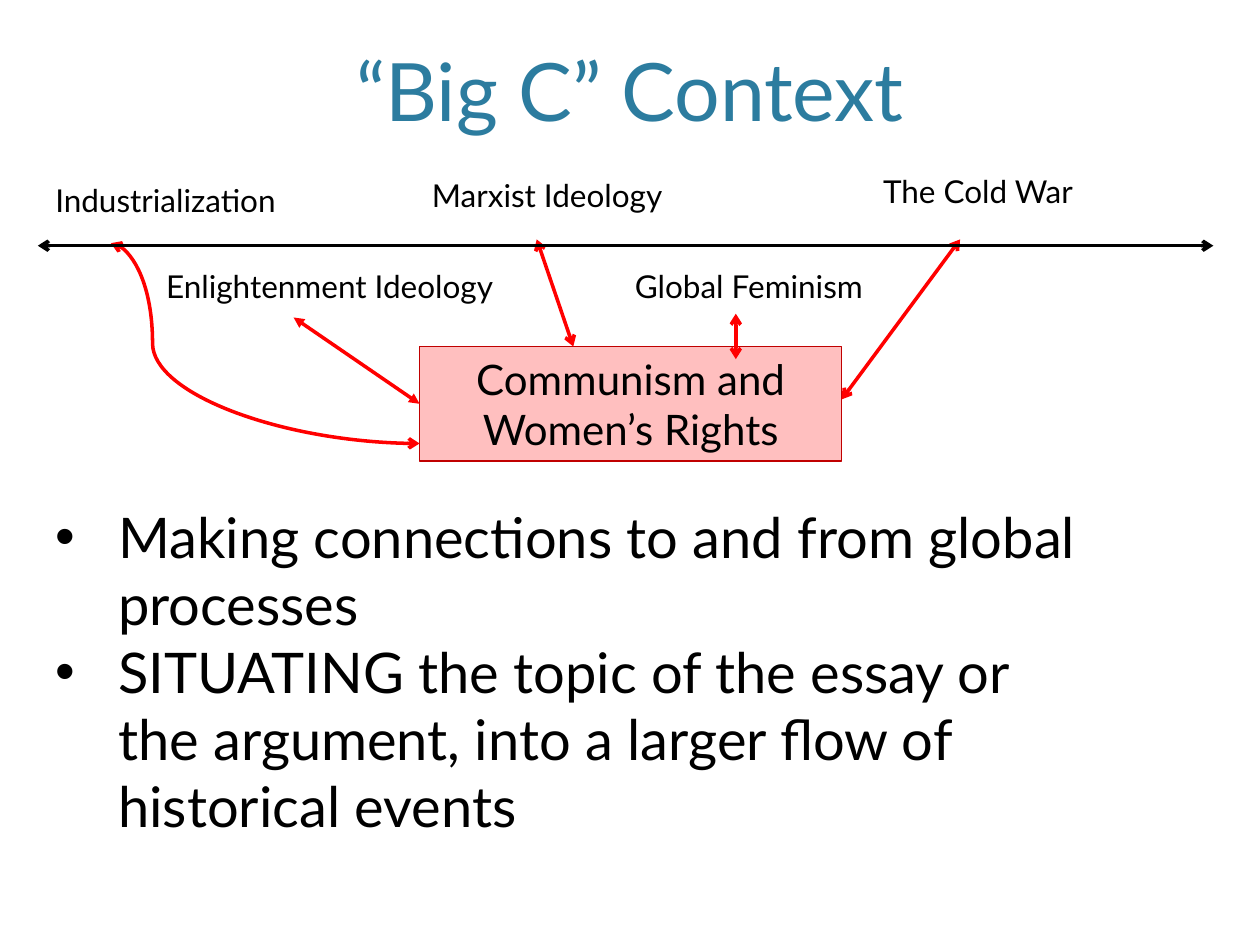
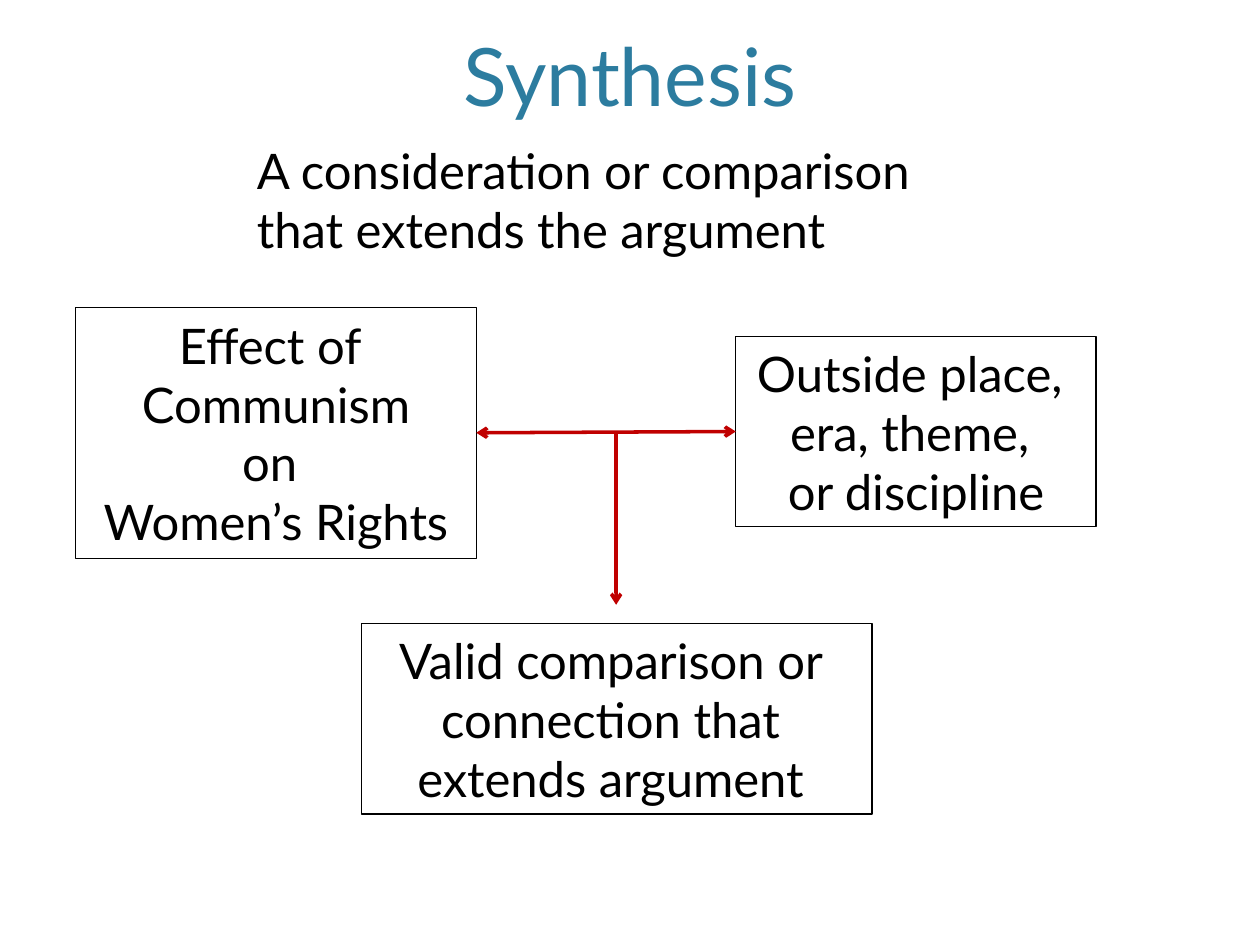
from collections import namedtuple

from lxml.etree import SubElement
from pptx import Presentation
from pptx.dml.color import RGBColor
from pptx.enum.shapes import MSO_CONNECTOR as Link, MSO_SHAPE as Preset
from pptx.enum.text import MSO_ANCHOR as Anchor, PP_ALIGN as Align
from pptx.oxml.ns import qn
from pptx.util import Emu, Pt

PX = 9144  # 100 px to the inch
FONT = "Lato"
BLACK = RGBColor(0x00, 0x00, 0x00)
TEAL = RGBColor(0x2C, 0x7C, 0x9F)
RED = RGBColor(0xFF, 0x00, 0x00)
DARK_RED = RGBColor(0xC0, 0x00, 0x00)
PINK = RGBColor(0xFF, 0xBF, 0xBF)
TOP, LEFT, BOTTOM, RIGHT = range(4)  # connection sites of a rectangle

Box = namedtuple("Box", "x y w h")


def px(*lengths):
    return [Emu(length * PX) for length in lengths]


def inside(region, x, y, w, h):
    return Box(region.x + x, region.y + y, w, h)


# Shared parts

def write(frame, paragraphs, size, color=BLACK, align=Align.LEFT, wrap=True):
    frame.word_wrap = wrap
    for i, wording in enumerate(paragraphs):
        paragraph = frame.paragraphs[0] if i == 0 else frame.add_paragraph()
        paragraph.text = wording
        paragraph.alignment = align
        paragraph.font.name = FONT
        paragraph.font.size = Pt(size)
        paragraph.font.color.rgb = color


def add_text(slide, box, paragraphs, size, **style):
    frame = slide.shapes.add_textbox(*px(*box)).text_frame
    write(frame, paragraphs, size, **style)
    return frame


def add_title(slide, box, wording):
    frame = add_text(slide, box, [wording], 46, color=TEAL, align=Align.CENTER)
    frame.vertical_anchor = Anchor.BOTTOM


def add_card(slide, box, paragraphs, size, edge=BLACK, fill=None, wrap=False):
    card = slide.shapes.add_shape(Preset.RECTANGLE, *px(*box))
    card.shadow.inherit = False
    if fill is None:
        card.fill.background()
    else:
        card.fill.solid()
        card.fill.fore_color.rgb = fill
    card.line.color.rgb = edge
    card.line.width = Pt(0.75)
    write(card.text_frame, paragraphs, size, align=Align.CENTER, wrap=wrap)
    card.text_frame.vertical_anchor = Anchor.MIDDLE
    return card


def add_arrow(slide, region, start, end, color, head="arrow", tail="arrow", bend=None):
    """Draw an arrow; bend is the turning point of a curve, in 1/100000 of its width."""
    kind = Link.STRAIGHT if bend is None else Link.CURVE
    arrow = slide.shapes.add_connector(
        kind, *px(region.x + start[0], region.y + start[1],
                  region.x + end[0], region.y + end[1]))
    arrow.line.color.rgb = color
    arrow.line.width = Pt(2)
    properties = arrow._element.spPr
    outline = properties.find(qn("a:ln"))
    for tag, tip in (("a:headEnd", head), ("a:tailEnd", tail)):
        if tip:
            SubElement(outline, qn(tag), type=tip)
    if bend is not None:
        adjustments = properties.find(qn("a:prstGeom")).find(qn("a:avLst"))
        SubElement(adjustments, qn("a:gd"), name="adj1", fmla=f"val {bend}")
    SubElement(properties, qn("a:effectLst"))
    return arrow


# Slide 1: timeline of global processes around the essay topic

def add_timeline(slide, region):
    topic = add_card(slide, inside(region, 303, 143, 335, 91),
                     ["Communism and\nWomen’s Rights"], 24,
                     edge=DARK_RED, fill=PINK, wrap=True)

    processes = [
        ("Industrialization", 4, 7, 215),
        ("Global Feminism", 464, 75, 220),
        ("Enlightenment Ideology", 92, 75, 304),
        ("Marxist Ideology", 303, 3, 219),
        ("The Cold War", 661, 0, 179),
    ]
    for process, x, y, width in processes:
        add_text(slide, inside(region, x, y, width, 40), [process], 18)

    # Links between the processes and the topic
    enlightenment = add_arrow(slide, region, (203, 120), (303, 188), RED,
                              head="triangle", tail="triangle")
    enlightenment.end_connect(topic, LEFT)
    marxism, cold_war, feminism = (
        ((396, 58), (425, 143)), ((732, 58), (638, 185)), ((554, 117), (554, 153)))
    for start, end in (marxism, cold_war, feminism):
        add_arrow(slide, region, start, end, RED)
    add_arrow(slide, region, (58, 61), (303, 220), RED, bend=13500)

    # Time axis
    add_arrow(slide, region, (0, 63), (region.w, 63), BLACK)


def add_bullets(slide, box, points):
    frame = add_text(slide, box, points, 32)
    for paragraph in frame.paragraphs:
        properties = paragraph._p.get_or_add_pPr()
        properties.set("marL", str(50 * PX))
        properties.set("indent", str(-50 * PX))
        SubElement(properties, qn("a:buFont"), typeface="Arial")
        SubElement(properties, qn("a:buChar"), char="•")


def build_context(slide):
    add_title(slide, Box(60, 12, 880, 102), "“Big C” Context")
    add_bullets(slide, Box(34, 394, 990, 279), [
        "Making connections to and from global processes",
        "SITUATING the topic of the essay or \nthe argument, into a larger flow of \n"
        "historical events",
    ])
    add_timeline(slide, Box(30, 132, 933, 234))


# Slide 2: comparison that leads to a wider argument

def add_comparison(slide, region):
    effect = add_card(slide, inside(region, 0, 0, 318, 199),
                      ["Effect of ", "Communism\non ", "Women’s Rights"], 28)
    outside = add_card(slide, inside(region, 524, 23, 286, 151),
                       ["Outside place, \nera, theme, ", "or discipline"], 28)
    across = add_arrow(slide, region, (318, 99), (524, 99), DARK_RED)
    across.begin_connect(effect, RIGHT)
    across.end_connect(outside, LEFT)
    add_arrow(slide, region, (429, 99), (429, 236), DARK_RED, head=None)
    add_card(slide, inside(region, 227, 251, 405, 151),
             ["Valid comparison or \nconnection that ", "extends argument "], 28)


def build_synthesis(slide):
    add_title(slide, Box(60, 12, 880, 90), "Synthesis")
    add_text(slide, Box(194, 107, 593, 104),
             ["A consideration or comparison", "that extends the argument"], 28)
    add_comparison(slide, Box(60, 244, 810, 402))


def main():
    deck = Presentation()
    deck.slide_width, deck.slide_height = px(1000, 750)
    blank = deck.slide_layouts[6]
    for build in (build_context, build_synthesis):
        build(deck.slides.add_slide(blank))
    deck.save("out.pptx")


if __name__ == "__main__":
    main()
